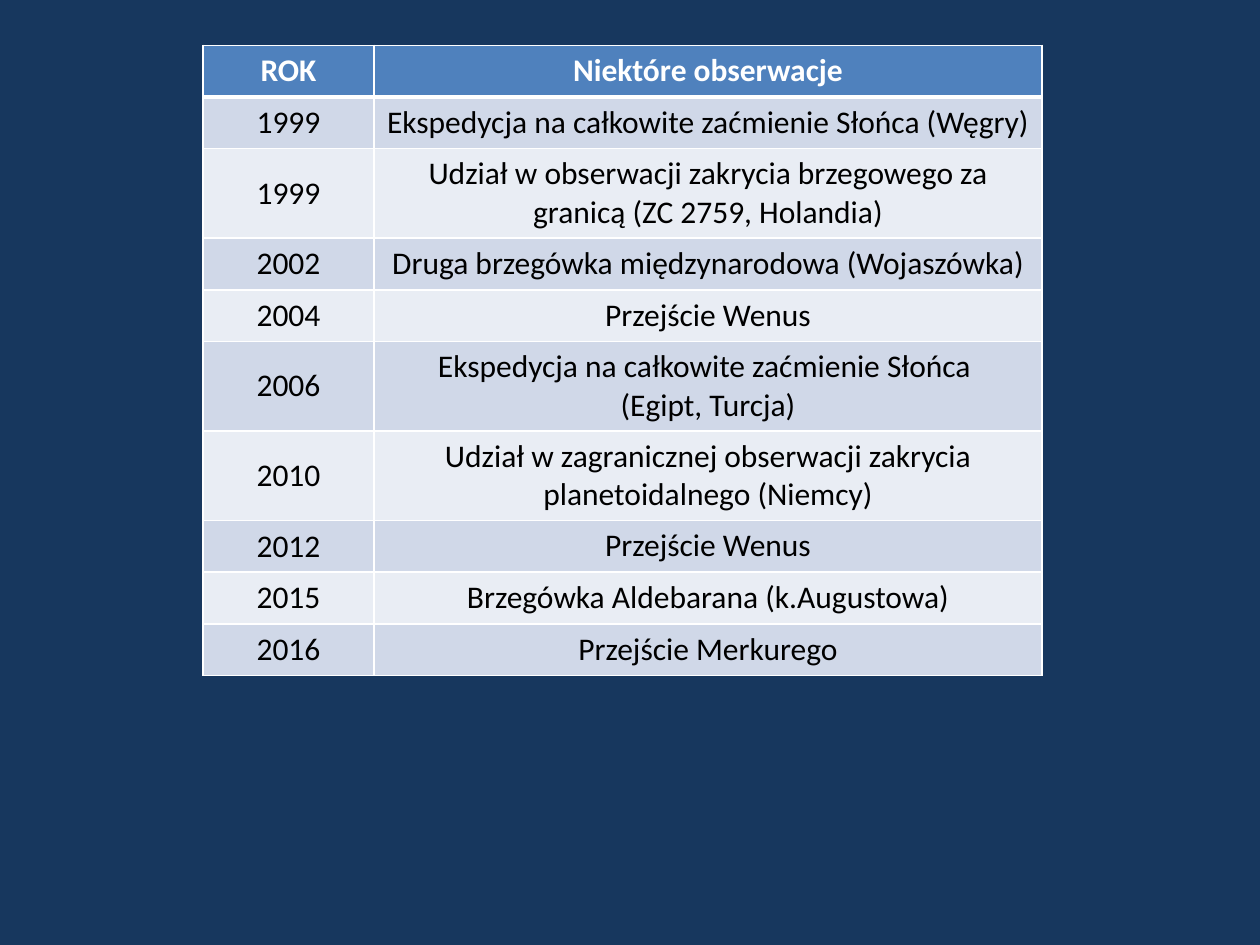
from lxml.etree import SubElement
from pptx import Presentation
from pptx.dml.color import RGBColor
from pptx.enum.text import MSO_ANCHOR, PP_ALIGN
from pptx.oxml.ns import qn
from pptx.util import Inches, Pt

COLORS = {
    "background": "17375E",
    "header": "4F81BD",
    "odd_row": "D0D8E8",
    "even_row": "E9EDF4",
    "border": "FFFFFF",
    "header_text": "FFFFFF",
    "body_text": "000000",
}
# A line break in an entry starts a new paragraph
OBSERVATIONS = [
    ("ROK", "Niektóre obserwacje"),
    ("1999", "Ekspedycja na całkowite zaćmienie Słońca (Węgry)"),
    ("1999", "Udział w obserwacji zakrycia brzegowego za granicą (ZC 2759, Holandia)"),
    ("2002", "Druga brzegówka międzynarodowa (Wojaszówka)"),
    ("2004", "Przejście Wenus"),
    ("2006", "Ekspedycja na całkowite zaćmienie Słońca \n(Egipt, Turcja)"),
    ("2010", "Udział w zagranicznej obserwacji zakrycia planetoidalnego (Niemcy)"),
    ("2012", "Przejście Wenus"),
    ("2015", "Brzegówka Aldebarana (k.Augustowa)"),
    ("2016", "Przejście Merkurego"),
]
COLUMN_WIDTHS = [1.36, 5.3]
ROW_HEIGHT = 0.41


def set_borders(cell, bottom_width):
    """Draw the four cell borders; they must come before the fill."""
    properties = cell._tc.get_or_add_tcPr()
    for side, width in (("L", 1), ("R", 1), ("T", 1), ("B", bottom_width)):
        line = SubElement(properties, qn(f"a:ln{side}"), w=str(Pt(width)))
        fill = SubElement(line, qn("a:solidFill"))
        SubElement(fill, qn("a:srgbClr"), val=COLORS["border"])


# Slide and background
presentation = Presentation()
presentation.slide_width = Inches(10)
presentation.slide_height = Inches(7.5)
slide = presentation.slides.add_slide(presentation.slide_layouts[6])
slide.background.fill.solid()
slide.background.fill.fore_color.rgb = RGBColor.from_string(COLORS["background"])

# Table grid
table_frame = slide.shapes.add_table(
    len(OBSERVATIONS), len(COLUMN_WIDTHS), Inches(1.61), Inches(0.36),
    Inches(sum(COLUMN_WIDTHS)), Inches(ROW_HEIGHT * len(OBSERVATIONS)))
table = table_frame.table
for column, width in zip(table.columns, COLUMN_WIDTHS):
    column.width = Inches(width)
for row in table.rows:
    row.height = Inches(ROW_HEIGHT)
table_frame.height = Inches(5.23)

# Table cells
for row_index, entries in enumerate(OBSERVATIONS):
    is_header = row_index == 0
    band = "header" if is_header else "odd_row" if row_index % 2 else "even_row"
    text_color = COLORS["header_text" if is_header else "body_text"]
    for column_index, entry in enumerate(entries):
        cell = table.cell(row_index, column_index)
        set_borders(cell, 3 if is_header else 1)
        cell.fill.solid()
        cell.fill.fore_color.rgb = RGBColor.from_string(COLORS[band])
        if column_index == 0 and not is_header:
            cell.vertical_anchor = MSO_ANCHOR.MIDDLE
        for line_index, text in enumerate(entry.split("\n")):
            frame = cell.text_frame
            paragraph = frame.add_paragraph() if line_index else frame.paragraphs[0]
            paragraph.alignment = PP_ALIGN.CENTER
            run = paragraph.add_run()
            run.text = text
            run.font.name = "Calibri"
            run.font.size = Pt(18)
            run.font.bold = is_header
            run.font.color.rgb = RGBColor.from_string(text_color)

presentation.save("out.pptx")
